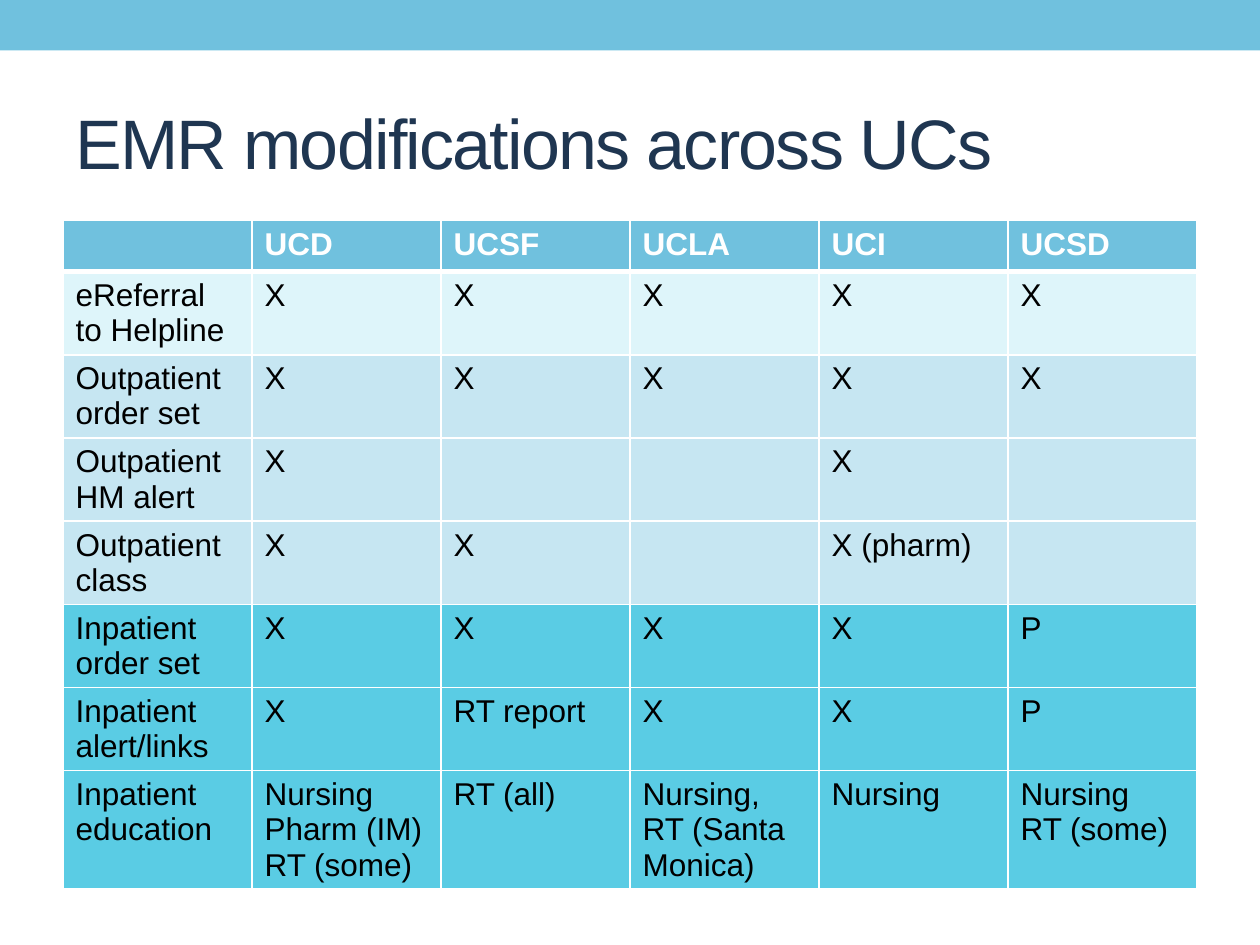
import pptx
import pptx.dml.color
import pptx.enum.shapes
import pptx.enum.text
import pptx.oxml
import pptx.oxml.ns
import pptx.util

Pt = pptx.util.Pt

COLORS = {
    "banner": "70C1DE",
    "title": "1F3651",
    "white": "FFFFFF",
    "black": "000000",
    "referral": "DEF5FA",
    "outpatient": "C6E6F2",
    "inpatient": "5ACCE4",
}

HEADER = ["", "UCD", "UCSF", "UCLA", "UCI", "UCSD"]
ROWS = [
    ("referral", ["eReferral to Helpline", "X", "X", "X", "X", "X"]),
    ("outpatient", ["Outpatient order set", "X", "X", "X", "X", "X"]),
    ("outpatient", ["Outpatient HM alert", "X", "", "", "X", ""]),
    ("outpatient", ["Outpatient class", "X", "X", "", "X (pharm)", ""]),
    ("inpatient", ["Inpatient order set", "X", "X", "X", "X", "P"]),
    ("inpatient", ["Inpatient alert/links", "X", "RT report", "X", "X", "P"]),
    ("inpatient", ["Inpatient education", "Nursing\nPharm (IM)\nRT (some)", "RT (all)",
                   "Nursing, RT (Santa Monica)", "Nursing", "Nursing\nRT (some)"]),
]


def rgb(name):
    return pptx.dml.color.RGBColor.from_string(COLORS[name])


def write_text(text_frame, text, size=18, color="black", bold=False, font="Arial", spacing=None):
    text_frame.text = text
    for paragraph in text_frame.paragraphs:
        paragraph.alignment = pptx.enum.text.PP_ALIGN.LEFT
        paragraph.font.size = Pt(size)
        for run in paragraph.runs:
            run.font.name = font
            run.font.size = Pt(size)
            run.font.bold = bold
            run.font.color.rgb = rgb(color)
            if spacing is not None:
                run.font._element.set("spc", str(spacing * 100))


class SlideBuilder:
    def __init__(self, presentation):
        self.slide = presentation.slides.add_slide(presentation.slide_layouts[5])

    def banner(self, left, top, width, height, color):
        shape = self.slide.shapes.add_shape(
            pptx.enum.shapes.MSO_SHAPE.RECTANGLE, Pt(left), Pt(top), Pt(width), Pt(height))
        shape.shadow.inherit = False
        shape.fill.solid()
        shape.fill.fore_color.rgb = rgb(color)
        shape.line.fill.background()

    def title(self, text, left, top, width, height):
        title = self.slide.shapes.title
        title.left, title.top = Pt(left), Pt(top)
        title.width, title.height = Pt(width), Pt(height)
        title.text_frame.vertical_anchor = pptx.enum.text.MSO_ANCHOR.MIDDLE
        write_text(title.text_frame, text, size=40, color="title", spacing=-1)

    def cell_borders(self, cell, widths):
        properties = cell._tc.get_or_add_tcPr()
        for position, (side, width) in enumerate(widths.items()):
            border = pptx.oxml.parse_xml(
                f'<a:ln{side} {pptx.oxml.ns.nsdecls("a")} w="{Pt(width)}">'
                f'<a:solidFill><a:srgbClr val="{COLORS["white"]}"/></a:solidFill></a:ln{side}>')
            properties.insert(position, border)

    def table(self, rows, left, top, column_width, row_heights):
        column_count = len(rows[0][1])
        table = self.slide.shapes.add_table(
            len(rows), column_count, Pt(left), Pt(top),
            Pt(column_width * column_count), Pt(sum(row_heights))).table
        for column in table.columns:
            column.width = Pt(column_width)
        for row_index, (fill, texts) in enumerate(rows):
            is_header = row_index == 0
            table.rows[row_index].height = Pt(row_heights[row_index])
            widths = {"L": 1, "R": 1, "T": 3 if row_index == 1 else 1, "B": 3 if is_header else 1}
            for column_index, text in enumerate(texts):
                cell = table.cell(row_index, column_index)
                cell.fill.solid()
                cell.fill.fore_color.rgb = rgb(fill)
                self.cell_borders(cell, widths)
                write_text(cell.text_frame, text,
                           color="white" if is_header else "black", bold=is_header)


def main():
    presentation = pptx.Presentation()
    presentation.slide_width = Pt(720)
    presentation.slide_height = Pt(540)
    builder = SlideBuilder(presentation)
    builder.banner(0, 0, 720, 28.8, "banner")
    builder.title("EMR modifications across UCs", 36, 42, 648, 78)
    builder.table([("banner", HEADER)] + ROWS, 36, 126, 108, [29.2] + [47.5] * 6 + [67.5])
    presentation.save("out.pptx")


if __name__ == "__main__":
    main()
